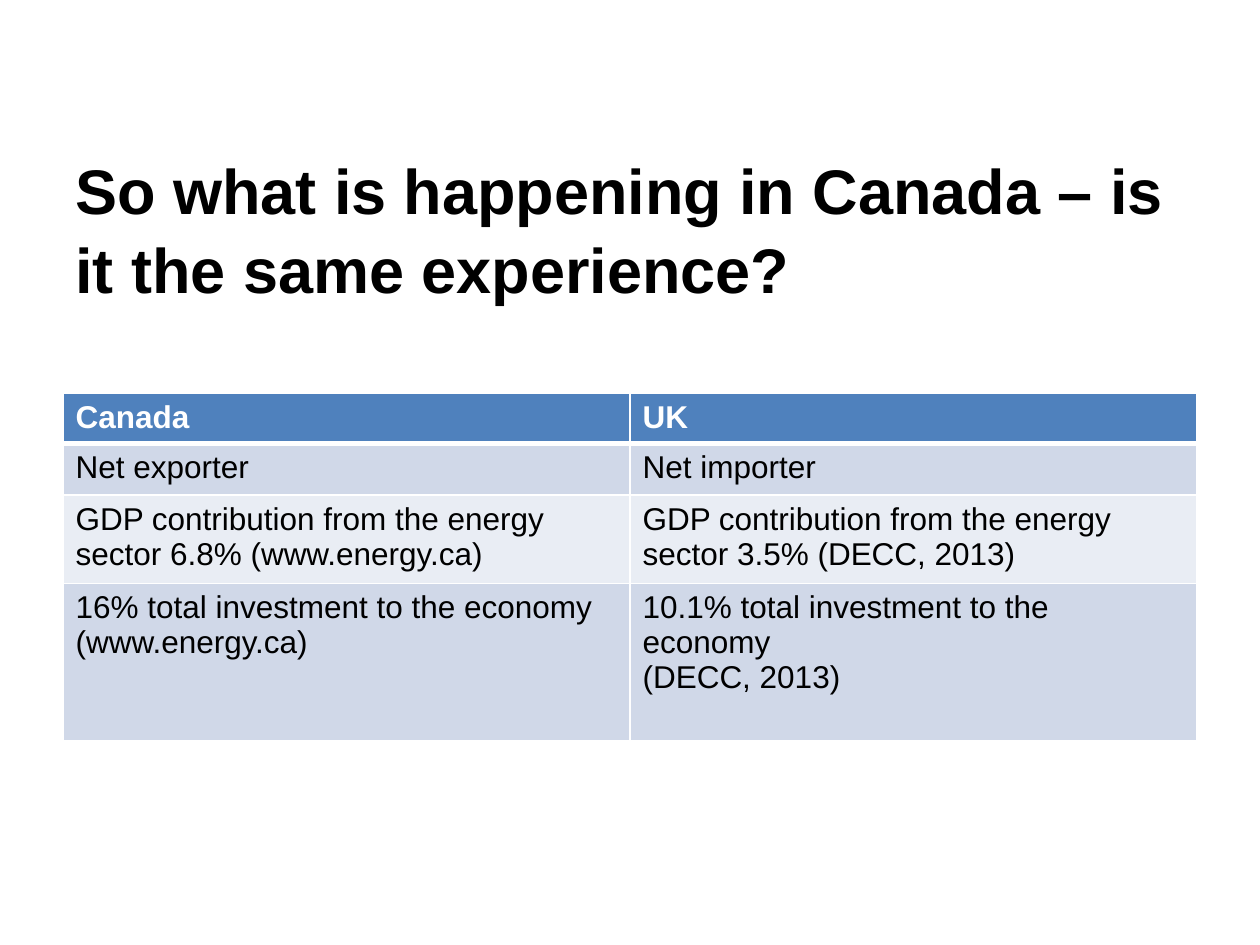
from lxml import etree
from pptx import Presentation
from pptx.dml.color import RGBColor
from pptx.enum.text import MSO_ANCHOR
from pptx.oxml.ns import qn
from pptx.util import Inches, Pt

TOP = MSO_ANCHOR.TOP
WIDE, HIGH = 10, 7.5
WHITE, BLACK, BLUE = "FFFFFF", "000000", "4F81BD"
BANDS = ["D0D8E8", "E9EDF4"]
ROWS = [
    ("Canada", "UK"),
    ("Net exporter", "Net importer"),
    ("GDP contribution from the energy sector 6.8% (www.energy.ca)",
     "GDP contribution from the energy sector 3.5% (DECC, 2013)"),
    ("16% total investment to the economy (www.energy.ca)",
     "10.1% total investment to the economy\n(DECC, 2013)"),
]
TALL = [0.4, 0.41, 0.66, 1.25]


def color(code):
    return RGBColor.from_string(code)


def write(frame, text, size, code, bold):
    frame.text = text
    look = {"name": "Arial", "size": Pt(size), "bold": bold}
    for para in frame.paragraphs:
        for key, value in look.items():
            setattr(para.font, key, value)
        para.font.color.rgb = color(code)


def edge(cell, side, width):
    line = etree.Element(qn("a:" + side), w=str(Pt(width)))
    fill = etree.SubElement(line, qn("a:solidFill"))
    etree.SubElement(fill, qn("a:srgbClr"), val=WHITE)
    return line


def add_title(slide, box):
    frame = slide.shapes.add_textbox(*map(Inches, box)).text_frame
    form = {"word_wrap": True, "vertical_anchor": TOP,
            "margin_top": Inches(0.1)}
    for key, value in form.items():
        setattr(frame, key, value)
    write(frame, "So what is happening in Canada – is it the same experience?",
          36, BLACK, True)
    frame.paragraphs[0].line_spacing = 1.05


def add_grid(slide, box):
    grid = slide.shapes.add_table(len(ROWS), len(ROWS[0]),
                                  *map(Inches, box)).table
    for r, row in enumerate(ROWS):
        grid.rows[r].height = Inches(TALL[r])
        head = r == 0
        for c, text in enumerate(row):
            cell = grid.cell(r, c)
            write(cell.text_frame, text, 18, WHITE if head else BLACK, head)
            # Borders come before the fill in the cell's XML
            widths = {"lnL": 1, "lnR": 1, "lnT": 3 if r == 1 else 1,
                      "lnB": 3 if head else 1}
            props = cell._tc.get_or_add_tcPr()
            for side, width in widths.items():
                props.append(edge(cell, side, width))
            cell.fill.solid()
            cell.fill.fore_color.rgb = color(
                BLUE if head else BANDS[(r - 1) % 2])


def main():
    deck = Presentation()
    deck.slide_width, deck.slide_height = Inches(WIDE), Inches(HIGH)
    slide = deck.slides.add_slide(deck.slide_layouts[6])
    side = WIDE * 0.05
    span = WIDE - 2 * side
    # Question above, comparison below
    add_title(slide, (side, 1.07, span, 1.59))
    add_grid(slide, (side, 3.12, span, sum(TALL)))
    deck.save("out.pptx")


if __name__ == "__main__":
    main()
